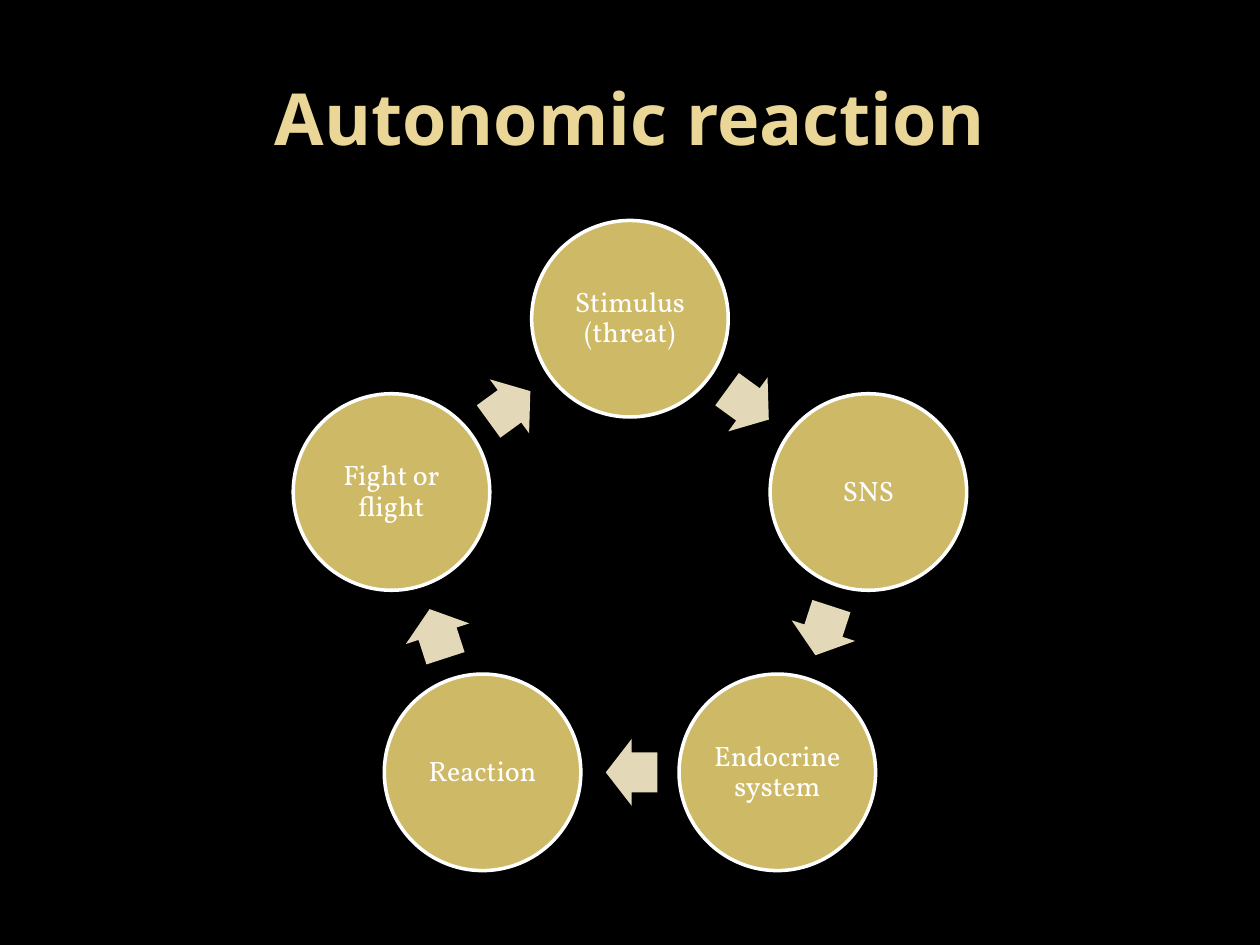
import math
import pptx
import pptx.util
import pptx.dml.color
import pptx.enum.shapes
import pptx.enum.text

Inches = pptx.util.Inches
SHAPE = pptx.enum.shapes.MSO_SHAPE

TITLE = "Autonomic reaction"
STAGES = ["Stimulus (threat)", "SNS", "Endocrine system", "Reaction", "Fight or flight"]
COLORS = {"background": "000000", "title": "EAD696", "circle": "CEB966",
          "arrow": "E3D9B8", "white": "FFFFFF"}

CENTER_X, CENTER_Y = 5, 4.52
STAGE_RADIUS, ARROW_RADIUS = 1.99, 1.61
DIAMETER = 1.56
ARROW_W, ARROW_H = 0.41, 0.53
ARROW_LAG = 0.45


def color(name):
    return pptx.dml.color.RGBColor.from_string(COLORS[name])


def write(sp, text, font, size, fill, bold=False, inset=None, spacing=1.0):
    tf = sp.text_frame
    tf.word_wrap = True
    tf.vertical_anchor = pptx.enum.text.MSO_ANCHOR.MIDDLE
    if inset is not None:
        tf.margin_left = tf.margin_right = Inches(inset)
        tf.margin_top = tf.margin_bottom = Inches(inset)
    p = tf.paragraphs[0]
    p.alignment = pptx.enum.text.PP_ALIGN.CENTER
    p.line_spacing = spacing
    r = p.add_run()
    r.text = text
    r.font.name = font
    r.font.size = pptx.util.Pt(size)
    r.font.bold = bold
    r.font.color.rgb = color(fill)


def add_on_ring(s, kind, angle, radius, width, height, fill):
    x = CENTER_X + radius * math.sin(math.radians(angle))
    y = CENTER_Y - radius * math.cos(math.radians(angle))
    sp = s.shapes.add_shape(kind, Inches(x - width / 2), Inches(y - height / 2),
                            Inches(width), Inches(height))
    sp.shadow.inherit = False
    sp.fill.solid()
    sp.fill.fore_color.rgb = color(fill)
    return sp


def main():
    prs = pptx.Presentation()
    prs.slide_width, prs.slide_height = Inches(10), Inches(7.5)
    s = prs.slides.add_slide(prs.slide_layouts[6])
    s.background.fill.solid()
    s.background.fill.fore_color.rgb = color("background")

    title = s.shapes.add_textbox(Inches(0.5), Inches(0.3), Inches(9), Inches(1.25))
    write(title, TITLE, "Noto Sans", 41, "title", bold=True)

    step = 360 / len(STAGES)
    for i, stage in enumerate(STAGES):
        angle = i * step
        circle = add_on_ring(s, SHAPE.OVAL, angle, STAGE_RADIUS, DIAMETER, DIAMETER, "circle")
        circle.line.color.rgb = color("white")
        circle.line.width = pptx.util.Pt(2)
        write(circle, stage, "Vollkorn", 16, "white", inset=0.02, spacing=0.9)

        heading = angle + step / 2
        arrow = add_on_ring(s, SHAPE.RIGHT_ARROW, heading - ARROW_LAG, ARROW_RADIUS,
                            ARROW_W, ARROW_H, "arrow")
        arrow.line.fill.background()
        arrow.adjustments[0] = 0.6
        arrow.adjustments[1] = 0.5
        arrow.rotation = heading

    prs.save("out.pptx")


if __name__ == "__main__":
    main()
